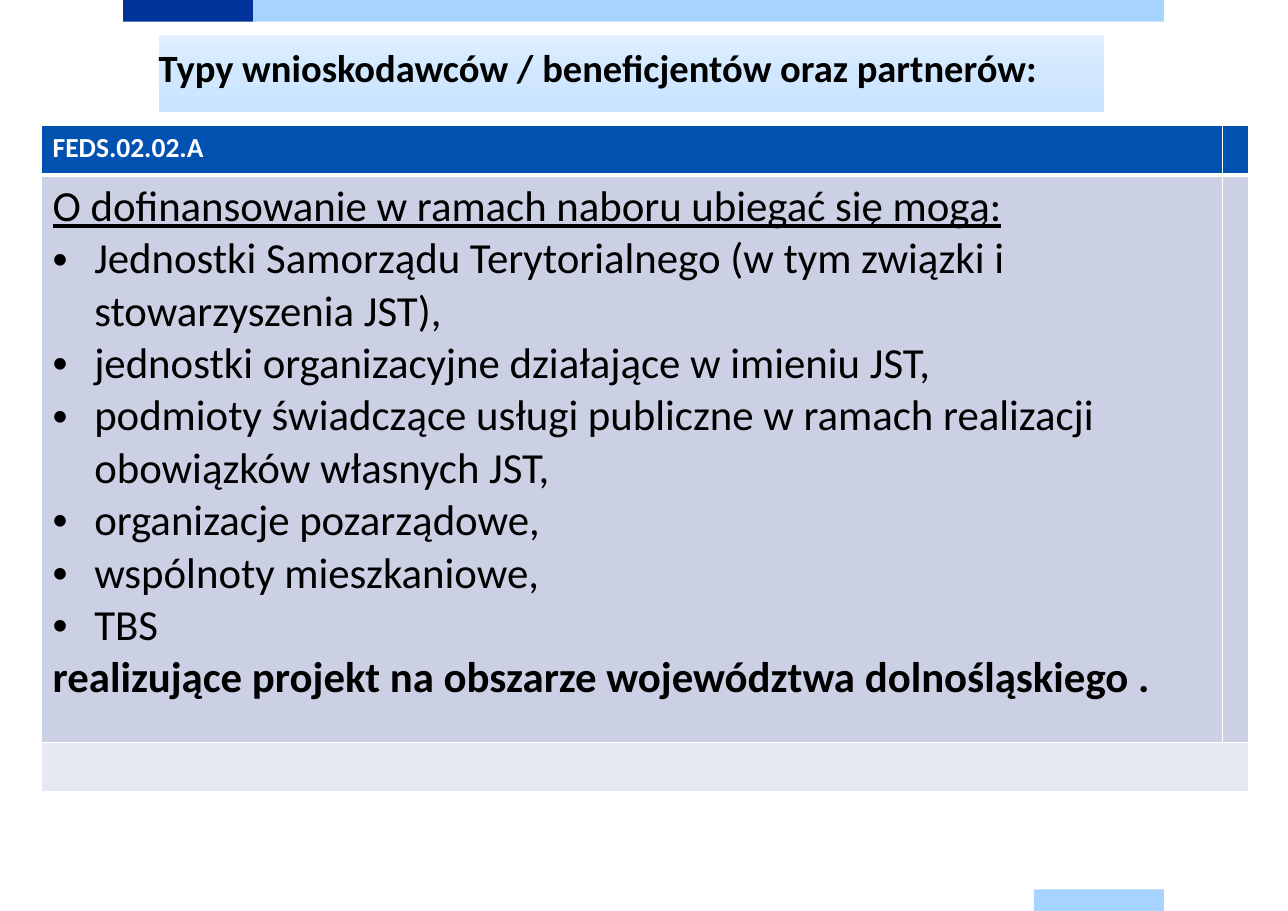
import copy

import pptx
import pptx.dml.color
import pptx.enum.shapes
import pptx.enum.text
import pptx.oxml
import pptx.oxml.ns
import pptx.util

Cm = pptx.util.Cm
Pt = pptx.util.Pt
qn = pptx.oxml.ns.qn

FONT = "Calibri"
COLOURS = {
    "navy": "003399",
    "sky": "A6D3FF",
    "title_top": "E1F0FF",
    "title_middle": "D0E7FF",
    "title_bottom": "CAE4FF",
    "header": "0051B0",
    "body": "CCD0E4",
    "footer": "E7E9F2",
    "white": "FFFFFF",
    "black": "000000",
}
BARS = [
    (2.84, 0, 3, "navy"),
    (5.84, 0, 21, "sky"),
    (23.84, 20.5, 3, "sky"),
]
BAR_HEIGHT = 0.5
COLUMN_WIDTHS = [27.23, 0.58]
ROW_HEIGHTS = [1.14, 13.08, 1.14]
INTRODUCTION = "O dofinansowanie w ramach naboru ubiegać się mogą:"
APPLICANTS = [
    "Jednostki Samorządu Terytorialnego (w tym związki i stowarzyszenia JST),",
    "jednostki organizacyjne działające w imieniu JST,",
    "podmioty świadczące usługi publiczne w ramach realizacji obowiązków własnych JST,",
    "organizacje pozarządowe,",
    "wspólnoty mieszkaniowe,",
    "TBS",
]
CLOSING = "realizujące projekt na obszarze województwa dolnośląskiego ."


def colour(name):
    return pptx.dml.color.RGBColor.from_string(COLOURS[name])


def style(paragraph, size, colour_name, bold=False, underline=False):
    font = paragraph.font
    font.name = FONT
    font.size = Pt(size)
    font.bold = bold
    font.underline = underline
    font.color.rgb = colour(colour_name)


def add_bar(page, left, top, width, colour_name):
    bar = page.shapes.add_shape(
        pptx.enum.shapes.MSO_SHAPE.RECTANGLE,
        Cm(left), Cm(top), Cm(width), Cm(BAR_HEIGHT))
    bar.shadow.inherit = False
    bar.fill.solid()
    bar.fill.fore_color.rgb = colour(colour_name)
    bar.line.fill.background()


def fill_with_gradient(shape, colour_names):
    shape.fill.gradient()
    shape.fill.gradient_angle = 270
    stop_list = shape._element.spPr.find(".//" + qn("a:gsLst"))
    stop_list.append(copy.deepcopy(stop_list[-1]))
    for index, (stop, name) in enumerate(zip(shape.fill.gradient_stops, colour_names)):
        stop.position = index / (len(colour_names) - 1)
        stop.color.rgb = colour(name)


def format_title(title):
    title.left, title.top = Cm(3.66), Cm(0.8)
    title.width, title.height = Cm(21.79), Cm(1.79)
    fill_with_gradient(title, ["title_top", "title_middle", "title_bottom"])
    frame = title.text_frame
    frame.margin_left = frame.margin_right = frame.margin_top = frame.margin_bottom = 0
    frame.word_wrap = True
    frame.auto_size = pptx.enum.text.MSO_AUTO_SIZE.NONE
    frame.vertical_anchor = pptx.enum.text.MSO_ANCHOR.TOP
    frame.text = "Typy wnioskodawców / beneficjentów oraz partnerów:"
    paragraph = frame.paragraphs[0]
    paragraph.alignment = pptx.enum.text.PP_ALIGN.LEFT
    paragraph.line_spacing = Pt(36)
    style(paragraph, 25.2, "black", bold=True)


def add_bullet(paragraph):
    properties = paragraph._p.get_or_add_pPr()
    properties.set("marL", str(Cm(0.96)))
    properties.set("indent", str(-Cm(0.96)))
    properties.append(properties.makeelement(qn("a:buFont"), {"typeface": "Arial"}))
    properties.append(properties.makeelement(qn("a:buChar"), {"char": "•"}))


def set_border(cell, side, width):
    properties = cell._tc.get_or_add_tcPr()
    line = properties.makeelement(qn("a:ln" + side), {"w": str(Pt(width))})
    solid = line.makeelement(qn("a:solidFill"), {})
    solid.append(solid.makeelement(qn("a:srgbClr"), {"val": COLOURS["white"]}))
    line.append(solid)
    properties.append(line)


def format_cell(cell, colour_name, top_width, bottom_width):
    for side, width in [("L", 1), ("R", 1), ("T", top_width), ("B", bottom_width)]:
        set_border(cell, side, width)
    cell.fill.solid()
    cell.fill.fore_color.rgb = colour(colour_name)


def write_applicants(frame):
    frame.text = "\n".join([INTRODUCTION, *APPLICANTS, CLOSING])
    introduction, *applicants, closing = frame.paragraphs
    style(introduction, 28, "black", underline=True)
    for applicant in applicants:
        add_bullet(applicant)
        style(applicant, 28, "black")
    style(closing, 28, "black", bold=True)


def add_applicant_table(page):
    table = page.shapes.add_table(
        len(ROW_HEIGHTS), len(COLUMN_WIDTHS), Cm(0.96), Cm(2.9),
        Cm(sum(COLUMN_WIDTHS)), Cm(sum(ROW_HEIGHTS))).table
    table.first_row = False
    table.horz_banding = False
    for column, width in zip(table.columns, COLUMN_WIDTHS):
        column.width = Cm(width)
    for row, height in zip(table.rows, ROW_HEIGHTS):
        row.height = Cm(height)
    row_styles = [("header", 1, 3), ("body", 3, 1), ("footer", 1, 1)]
    for row, row_style in zip(table.rows, row_styles):
        for cell in row.cells:
            format_cell(cell, *row_style)
    table.cell(2, 0).merge(table.cell(2, 1))
    heading = table.cell(0, 0).text_frame
    heading.text = "FEDS.02.02.A"
    style(heading.paragraphs[0], 18, "white", bold=True)
    write_applicants(table.cell(1, 0).text_frame)


def main():
    deck = pptx.Presentation()
    deck.slide_width = Cm(29.7)
    deck.slide_height = Cm(21)
    page = deck.slides.add_slide(deck.slide_layouts[5])
    for bar in BARS:
        add_bar(page, *bar)
    format_title(page.shapes.title)
    add_applicant_table(page)
    deck.save("out.pptx")


if __name__ == "__main__":
    main()
